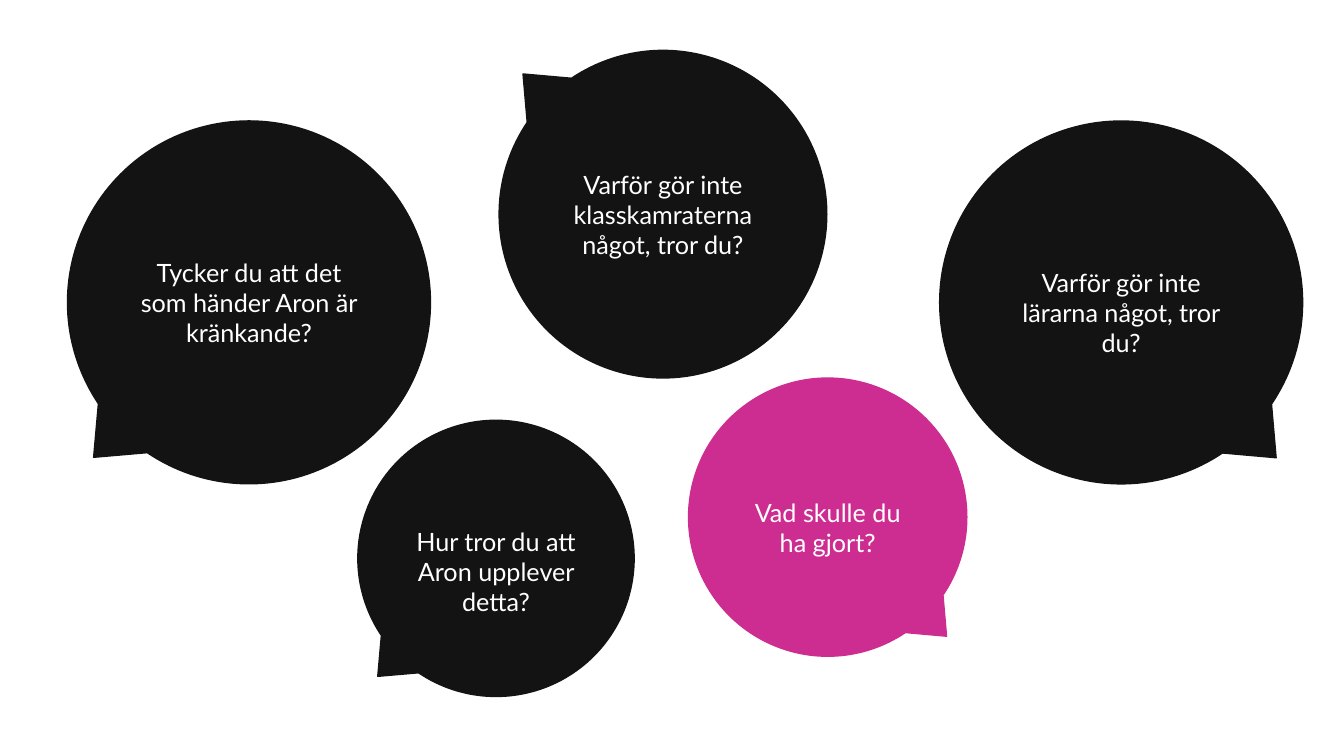
from pptx import Presentation
from pptx.dml.color import RGBColor
from pptx.enum.shapes import MSO_SHAPE
from pptx.enum.text import MSO_ANCHOR, PP_ALIGN
from pptx.util import Inches, Pt

BLACK, PINK, WHITE = "131313", "CD2D90", "FFFFFF"


def color(fmt, value):
    fmt.rgb = RGBColor.from_string(value)


def write(tf, text, font="Lato", size=18, fill=WHITE, align=PP_ALIGN.CENTER):
    p = tf.paragraphs[0]
    p.alignment = align
    r = p.add_run()
    r.text = text
    r.font.name = font
    r.font.size = Pt(size)
    color(r.font.color, fill)


class Deck:
    tail = (-0.428, 0.427)
    text_turn = {90: "vert270", 270: "vert"}

    def __init__(self, prs):
        self.s = prs.slides.add_slide(prs.slide_layouts[6])

    def bubble(self, text, left, top, size, fill=BLACK, rotation=0,
               insets=(0.1, 0.05, 0.1, 0.05)):
        sp = self.s.shapes.add_shape(
            MSO_SHAPE.OVAL_CALLOUT, Inches(left), Inches(top), Inches(size), Inches(size))
        sp.adjustments[0], sp.adjustments[1] = self.tail
        sp.rotation = rotation
        sp.shadow.inherit = False
        sp.fill.solid()
        color(sp.fill.fore_color, fill)
        color(sp.line.color, fill)
        sp.line.width = Pt(1)
        tf = sp.text_frame
        tf.word_wrap = True
        tf.vertical_anchor = MSO_ANCHOR.MIDDLE
        tf.margin_left, tf.margin_top, tf.margin_right, tf.margin_bottom = map(Inches, insets)
        if rotation:
            tf._txBody.bodyPr.set("vert", self.text_turn[rotation])
        write(tf, text)


def main():
    prs = Presentation()
    prs.slide_width, prs.slide_height = Inches(13.33), Inches(7.5)
    deck = Deck(prs)
    right_insets = (0.08, 0.24, 0.28, 0.24)
    deck.bubble("Tycker du att det som händer Aron är kränkande?", 0.67, 1.2, 3.6)
    deck.bubble("Hur tror du att Aron upplever detta?", 3.55, 4.17, 2.74,
                insets=(0.08, 0.31, 0.08, 0.05))
    deck.bubble("Varför gör inte klasskamraterna något, tror du?", 4.95, 0.5, 3.25,
                rotation=90, insets=(0, 0.24, 0, 0.24))
    deck.bubble("Varför gör inte lärarna något, tror du?", 9.32, 1.2, 3.6,
                rotation=270, insets=right_insets)
    deck.bubble("Vad skulle du ha gjort?", 6.83, 3.75, 2.76, fill=PINK,
                rotation=270, insets=right_insets)
    prs.save("out.pptx")


if __name__ == "__main__":
    main()
